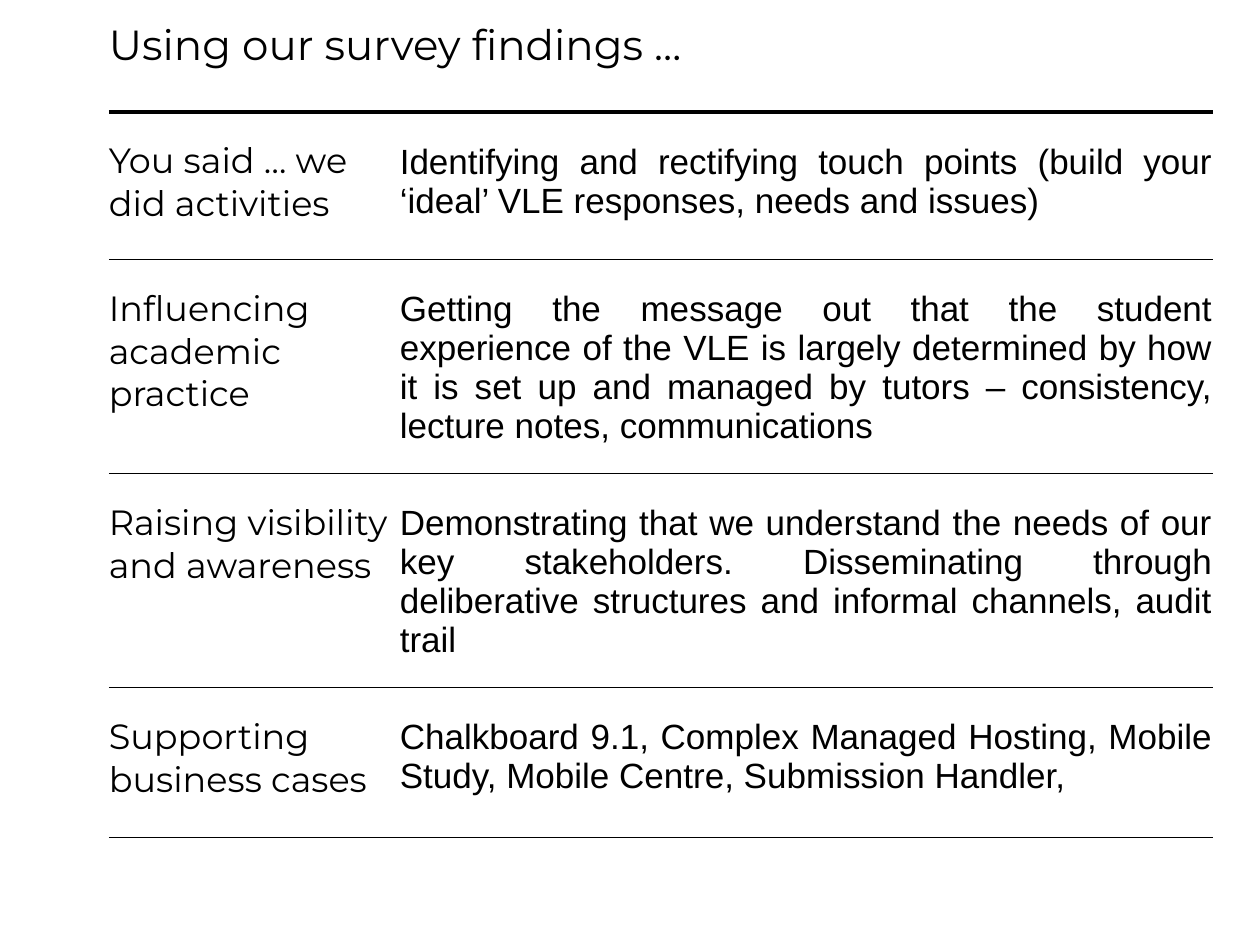
import pptx
import pptx.util
import pptx.dml.color
import pptx.enum.text
import pptx.oxml.ns
from lxml import etree

Pt = pptx.util.Pt
qn = pptx.oxml.ns.qn
INK = {"text": "000000", "rule": "000000"}
PLAIN = "{2D5ABB26-0587-4C30-8999-92F81FD0307C}"  # no style, no grid


def fill_cell(cell, text, font, size, top, low):
    cell.margin_left = cell.margin_right = 0
    cell.margin_top, cell.margin_bottom = Pt(top), Pt(low)
    cell.text = text
    para = cell.text_frame.paragraphs[0]
    para.font.name = font
    para.font.size = Pt(size)
    para.font.color.rgb = pptx.dml.color.RGBColor.from_string(INK["text"])
    return para


def add_rule(cell, side, width):
    props = cell._tc.get_or_add_tcPr()
    line = etree.SubElement(props, qn("a:" + side), w=str(Pt(width)))
    solid = etree.SubElement(line, qn("a:solidFill"))
    etree.SubElement(solid, qn("a:srgbClr"), val=INK["rule"])


deck = pptx.Presentation()
deck.slide_width, deck.slide_height = Pt(720), Pt(540)
slide = deck.slides.add_slide(deck.slide_layouts[6])

title = "Using our survey findings …"
rows = [
    ("You said … we did activities",
     "Identifying and rectifying touch points (build your ‘ideal’ VLE "
     "responses, needs and issues)"),
    ("Influencing academic practice",
     "Getting the message out that the student experience of the VLE is "
     "largely determined by how it is set up and managed by tutors – "
     "consistency, lecture notes, communications"),
    ("Raising visibility and awareness",
     "Demonstrating that we understand the needs of our key stakeholders. "
     "Disseminating through deliberative structures and informal channels, "
     "audit trail"),
    ("Supporting business cases",
     "Chalkboard 9.1, Complex Managed Hosting, Mobile Study, "
     "Mobile Centre, Submission Handler,"),
]

# Table grid
frame = slide.shapes.add_table(5, 2, Pt(62.2), Pt(11.5), Pt(630.7), Pt(496.8))
table = frame.table
table.first_row = table.horz_banding = False
table._tbl.tblPr.find(qn("a:tableStyleId")).text = PLAIN
for col, width in zip(table.columns, (166.3, 464.4)):
    col.width = Pt(width)
for row, height in zip(table.rows, (52.6, 84.2, 80.6, 104.4, 85.7)):
    row.height = Pt(height)
frame.height = Pt(496.8)

# Heading across both columns
table.cell(0, 0).merge(table.cell(0, 1))
fill_cell(table.cell(0, 0), title, "Montserrat", 24, 0, 18.7)

# Topics and actions
for i, (topic, action) in enumerate(rows, 1):
    fill_cell(table.cell(i, 0), topic, "Montserrat", 20, 15.8, 15.8)
    para = fill_cell(table.cell(i, 1), action, "Arial", 20, 17.3, 15.8)
    para.alignment = pptx.enum.text.PP_ALIGN.JUSTIFY

# Rules between rows, heavy under the heading
for i in range(5):
    for j in range(2):
        cell = table.cell(i, j)
        if i:
            add_rule(cell, "lnT", 3 if i == 1 else 0.75)
        add_rule(cell, "lnB", 0.75 if i else 3)
        cell.fill.background()

deck.save("out.pptx")
